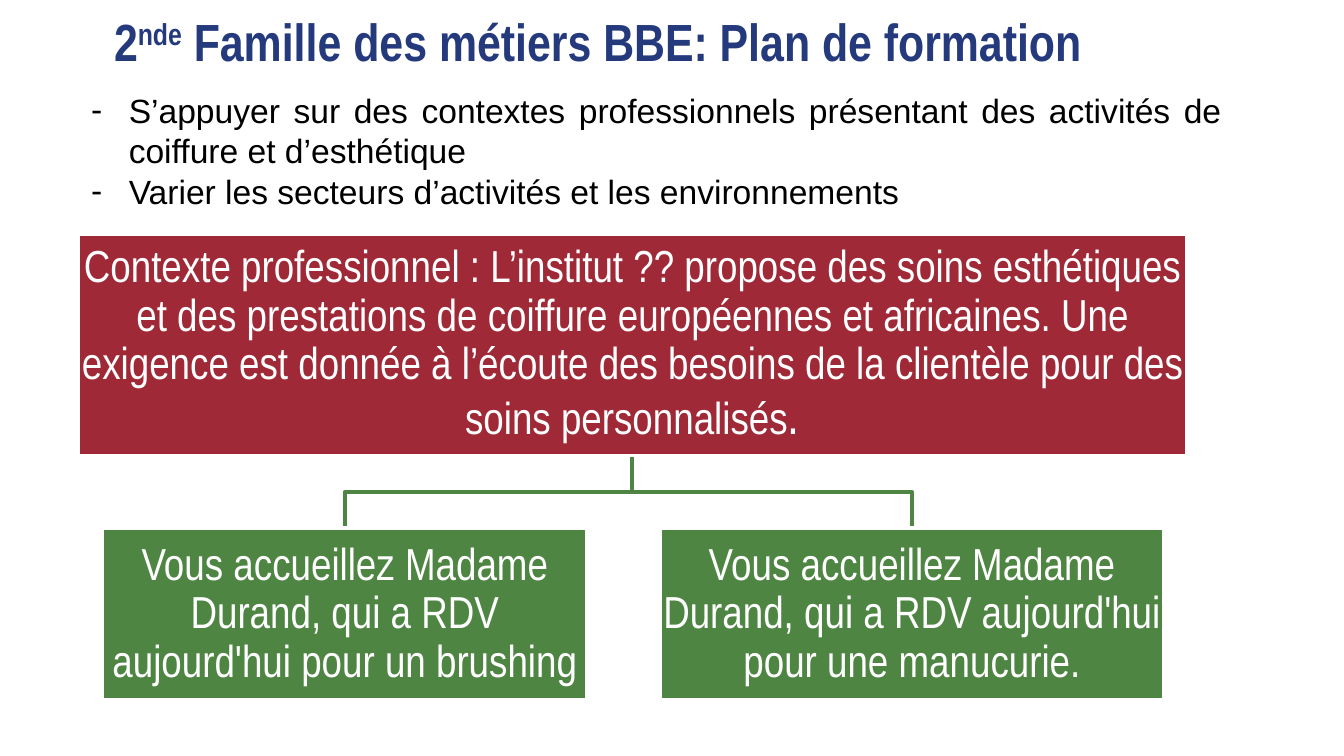
from dataclasses import dataclass

from lxml.etree import SubElement
from pptx import Presentation
from pptx.dml.color import RGBColor
from pptx.enum.shapes import MSO_SHAPE
from pptx.enum.text import MSO_ANCHOR, PP_ALIGN
from pptx.oxml.ns import qn
from pptx.slide import Slide
from pptx.text.text import TextFrame, _Paragraph
from pptx.util import Inches, Pt


@dataclass(frozen=True)
class Theme:
    navy: RGBColor = RGBColor(0x24, 0x3A, 0x7D)
    black: RGBColor = RGBColor(0, 0, 0)
    white: RGBColor = RGBColor(255, 255, 255)
    red: RGBColor = RGBColor(0x9F, 0x29, 0x36)
    green: RGBColor = RGBColor(0x4E, 0x85, 0x42)
    heading_font: str = "Arial Narrow"
    body_font: str = "Arial"
    title_size: int = 28
    box_size: int = 24
    body_size: int = 18
    line_width: int = 2


@dataclass(frozen=True)
class Box:
    text: str
    left: float
    top: float
    width: float
    height: float
    fill: RGBColor
    ending: str = ""

    @property
    def center(self) -> float:
        return self.left + self.width / 2


THEME = Theme()


def add_text(paragraph: _Paragraph, text: str, *, size: int, color: RGBColor,
             font: str = THEME.heading_font, bold: bool = False,
             superscript: bool = False) -> None:
    run = paragraph.add_run()
    run.text = text
    run.font.name = font
    run.font.size = Pt(size)
    run.font.bold = bold
    run.font.color.rgb = color
    if superscript:
        run._r.get_or_add_rPr().set("baseline", "30000")


def set_margins(frame: TextFrame, margin: float) -> None:
    frame.margin_left = frame.margin_right = Inches(margin)
    frame.margin_top = frame.margin_bottom = Inches(margin)


def add_dash(paragraph: _Paragraph, indent: float) -> None:
    properties = paragraph._p.get_or_add_pPr()
    properties.set("marL", str(Inches(indent)))
    properties.set("indent", str(Inches(-indent)))
    SubElement(properties, qn("a:buFont")).set("typeface", THEME.body_font)
    SubElement(properties, qn("a:buChar")).set("char", "-")


def add_title(slide: Slide) -> None:
    shape = slide.shapes.add_textbox(Inches(-0.11), Inches(0.12), Inches(9.2), Inches(0.59))
    frame = shape.text_frame
    frame.word_wrap = True
    set_margins(frame, 0)
    paragraph = frame.paragraphs[0]
    paragraph.alignment = PP_ALIGN.CENTER
    paragraph.line_spacing = 0.9
    for text, raised in (("2", False), ("nde", True),
                         (" Famille des métiers BBE: Plan de formation ", False)):
        add_text(paragraph, text, size=THEME.title_size, color=THEME.navy,
                 bold=True, superscript=raised)


def add_guidelines(slide: Slide, lines: tuple[str, ...]) -> None:
    shape = slide.shapes.add_textbox(Inches(0.58), Inches(0.62), Inches(8.61), Inches(1.01))
    frame = shape.text_frame
    frame.word_wrap = True
    for index, line in enumerate(lines):
        paragraph = frame.add_paragraph() if index else frame.paragraphs[0]
        paragraph.alignment = PP_ALIGN.JUSTIFY
        add_dash(paragraph, 0.28)
        add_text(paragraph, line, size=THEME.body_size, color=THEME.black,
                 font=THEME.body_font)


def add_branch(slide: Slide, parent: Box, child: Box) -> None:
    start = parent.top + parent.height
    middle = (start + child.top) / 2
    builder = slide.shapes.build_freeform(Inches(parent.center), Inches(start))
    points = ((parent.center, middle), (child.center, middle), (child.center, child.top))
    builder.add_line_segments([(Inches(x), Inches(y)) for x, y in points], close=False)
    shape = builder.convert_to_shape()
    shape.shadow.inherit = False
    shape.fill.background()
    shape.line.color.rgb = THEME.green
    shape.line.width = Pt(THEME.line_width)


def add_box(slide: Slide, box: Box) -> None:
    shape = slide.shapes.add_shape(MSO_SHAPE.RECTANGLE, Inches(box.left), Inches(box.top),
                                   Inches(box.width), Inches(box.height))
    shape.shadow.inherit = False
    shape.fill.solid()
    shape.fill.fore_color.rgb = box.fill
    shape.line.color.rgb = THEME.white
    shape.line.width = Pt(THEME.line_width)
    frame = shape.text_frame
    frame.word_wrap = True
    frame.vertical_anchor = MSO_ANCHOR.MIDDLE
    set_margins(frame, 0.02)
    paragraph = frame.paragraphs[0]
    paragraph.alignment = PP_ALIGN.CENTER
    paragraph.line_spacing = 0.9
    add_text(paragraph, box.text, size=THEME.box_size, color=THEME.white)
    if box.ending:
        add_text(paragraph, box.ending, size=THEME.title_size, color=THEME.white)


def main() -> None:
    # Widescreen slide, 16:9
    presentation = Presentation()
    presentation.slide_width = Inches(10)
    presentation.slide_height = Inches(10 * 9 / 16)
    slide = presentation.slides.add_slide(presentation.slide_layouts[6])

    # Title and guidelines
    add_title(slide)
    add_guidelines(slide, (
        "S’appuyer sur des contextes professionnels présentant des activités de "
        "coiffure et d’esthétique ",
        "Varier les secteurs d’activités et les environnements",
    ))

    # Professional context and its two situations
    context = Box(
        "Contexte professionnel : L’institut ?? propose des soins esthétiques et des "
        "prestations de coiffure européennes et africaines. Une exigence est donnée à "
        "l’écoute des besoins de la clientèle pour des soins personnalisés",
        0.58, 1.74, 8.25, 1.65, THEME.red, ending=".")
    welcome = "Vous accueillez Madame Durand, qui a RDV aujourd'hui pour "
    situations = (
        Box(welcome + "un brushing", 0.76, 3.93, 3.61, 1.28, THEME.green),
        Box(welcome + "une manucurie.", 4.91, 3.93, 3.75, 1.28, THEME.green),
    )
    for situation in situations:
        add_branch(slide, context, situation)
    for box in (context, *situations):
        add_box(slide, box)

    presentation.save("out.pptx")


if __name__ == "__main__":
    main()
